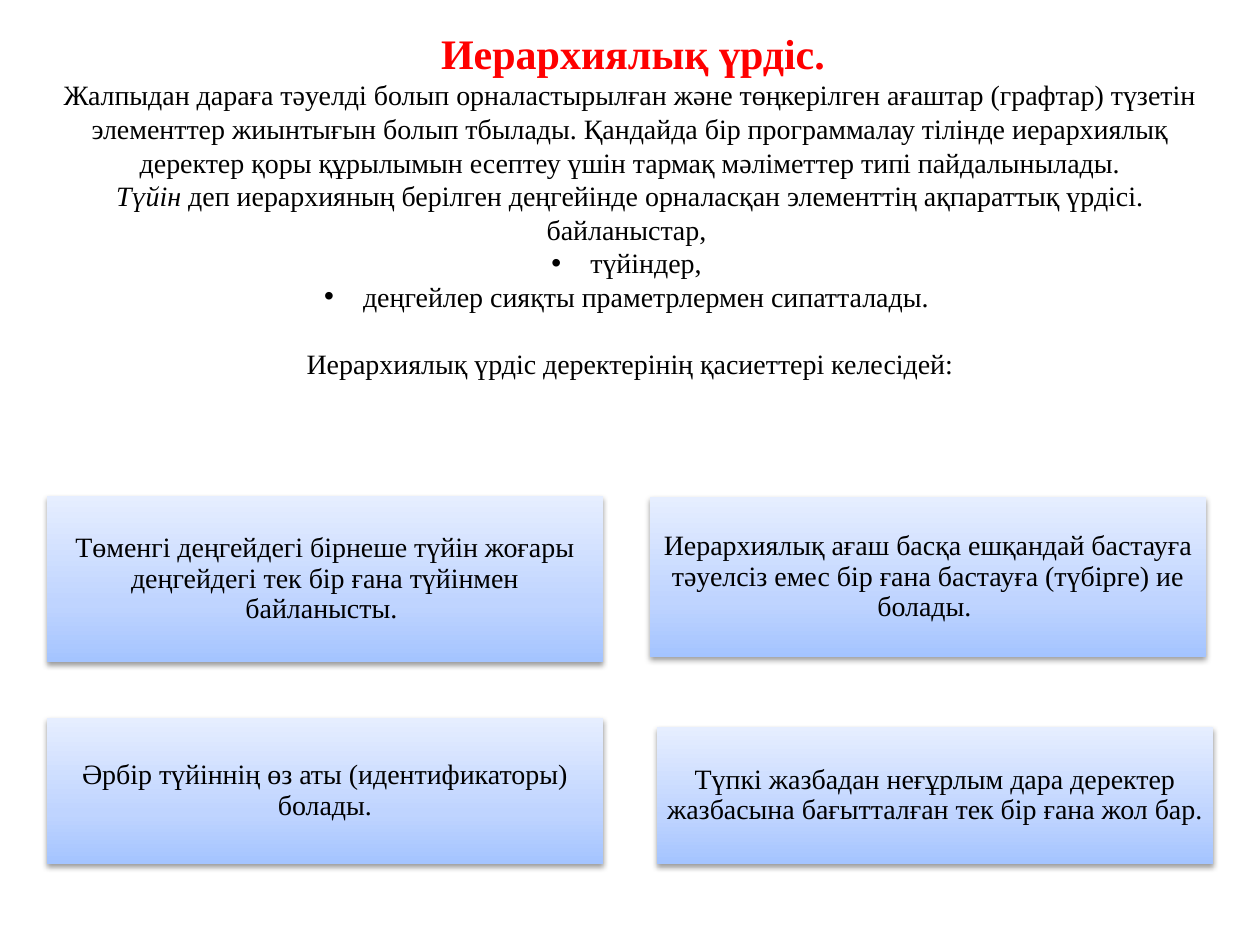
from copy import deepcopy
from dataclasses import dataclass

from lxml.etree import SubElement
from pptx import Presentation
from pptx.dml.color import RGBColor
from pptx.enum.shapes import MSO_SHAPE
from pptx.enum.text import MSO_ANCHOR, MSO_AUTO_SIZE, PP_ALIGN
from pptx.oxml.ns import qn
from pptx.util import Emu, Pt

RED = RGBColor(0xFF, 0x00, 0x00)
BLACK = RGBColor(0x00, 0x00, 0x00)
DEEP = RGBColor(0xA4, 0xC4, 0xFF)
MID = RGBColor(0xBF, 0xD4, 0xFF)
PALE = RGBColor(0xE6, 0xEE, 0xFF)
STOPS = ((0, DEEP), (0.35, MID), (1, PALE))
FONT = "Times New Roman"


@dataclass
class Line:
    text: str
    lead: str = ""
    dot: bool = False
    gap: float = 0


@dataclass
class Card:
    left: int
    top: int
    high: int
    text: str


CARD_W = 556
CARDS = [
    Card(47, 496, 166, "Төменгі деңгейдегі бірнеше түйін жоғары деңгейдегі тек бір ғана түйінмен байланысты. "),
    Card(650, 497, 160, "Иерархиялық ағаш басқа ешқандай бастауға тәуелсіз емес бір ғана бастауға (түбірге) ие болады. "),
    Card(47, 718, 146, "Әрбір түйіннің өз аты (идентификаторы) болады."),
    Card(657, 727, 137, "Түпкі жазбадан неғұрлым дара деректер жазбасына бағытталған тек бір ғана жол бар."),
]
BODY = [
    Line("Жалпыдан дараға тәуелді болып орналастырылған және төңкерілген ағаштар (графтар) түзетін "
         "элементтер жиынтығын болып тбылады. Қандайда бір программалау тілінде иерархиялық деректер "
         "қоры құрылымын есептеу үшін тармақ мәліметтер типі пайдалынылады."),
    Line(" деп иерархияның берілген деңгейінде орналасқан элементтің ақпараттық үрдісі. байланыстар, ",
         lead="Түйін"),
    Line("түйіндер, ", dot=True),
    Line("деңгейлер сияқты праметрлермен сипатталады. ", dot=True),
    Line("Иерархиялық үрдіс деректерінің қасиеттері келесідей:", gap=19.2),
]


def px(n: int) -> Emu:
    return Emu(round(n * 914400 / 126))


def place(shape, left: int, top: int, wide: int, high: int) -> None:
    shape.left, shape.top, shape.width, shape.height = map(px, (left, top, wide, high))


def bullet(para) -> None:
    props = para._p.get_or_add_pPr()
    props.set("marL", str(px(39)))
    props.set("indent", str(px(-39)))
    SubElement(props, qn("a:buFont"), typeface="Arial")
    SubElement(props, qn("a:buChar"), char="•")


def write(frame, lines: list[Line], size: int = 16, color: RGBColor = BLACK, bold: bool = False,
          space: float = 1, anchor=MSO_ANCHOR.TOP, side: int = 13, edge: int = 0) -> None:
    frame.word_wrap = True
    frame.auto_size = MSO_AUTO_SIZE.NONE
    frame.vertical_anchor = anchor
    frame.margin_left = frame.margin_right = px(side)
    frame.margin_top = frame.margin_bottom = px(edge)
    for i, line in enumerate(lines):
        para = frame.add_paragraph() if i else frame.paragraphs[0]
        para.alignment = PP_ALIGN.CENTER
        para.line_spacing = space
        para.space_before = Pt(line.gap)
        if line.dot:
            bullet(para)
        for text, slant in ((line.lead, True), (line.text, False)):
            if not text:
                continue
            run = para.add_run()
            run.text = text
            font = run.font
            font.name, font.size, font.bold, font.italic = FONT, Pt(size), bold, slant
            font.color.rgb = color


def shade(shape) -> None:
    fill = shape.fill
    fill.gradient()
    fill.gradient_angle = 90
    group = shape._element.spPr.find(".//" + qn("a:gsLst"))
    group.insert(1, deepcopy(group[0]))
    for stop, (spot, color) in zip(fill.gradient_stops, STOPS):
        stop.position = spot
        stop.color.rgb = color


def shadow(shape) -> None:
    shape.shadow.inherit = False
    effect = shape._element.spPr.find(qn("a:effectLst"))
    outer = SubElement(effect, qn("a:outerShdw"), blurRad=str(Pt(3.15)), dist=str(Pt(1.57)),
                       dir="5400000", rotWithShape="0")
    tone = SubElement(outer, qn("a:srgbClr"), val=str(BLACK))
    SubElement(tone, qn("a:alpha"), val="38000")


def draw(slide, card: Card) -> None:
    shape = slide.shapes.add_shape(MSO_SHAPE.RECTANGLE, 0, 0, 0, 0)
    place(shape, card.left, card.top, CARD_W, card.high)
    shade(shape)
    shape.line.fill.background()
    shadow(shape)
    write(shape.text_frame, [Line(card.text)], space=0.9, anchor=MSO_ANCHOR.MIDDLE, side=9, edge=9)


def main() -> None:
    deck = Presentation()
    deck.slide_width, deck.slide_height = px(1260), px(945)
    slide = deck.slides.add_slide(deck.slide_layouts[5])
    title = slide.shapes.title
    place(title, 32, 27, 1202, 50)
    write(title.text_frame, [Line("Иерархиялық үрдіс.")], size=24, color=RED, bold=True)
    body = slide.shapes.add_textbox(0, 0, 0, 0)
    place(body, 29, 78, 1202, 345)
    write(body.text_frame, BODY)
    for card in CARDS:
        draw(slide, card)
    deck.save("out.pptx")


if __name__ == "__main__":
    main()
